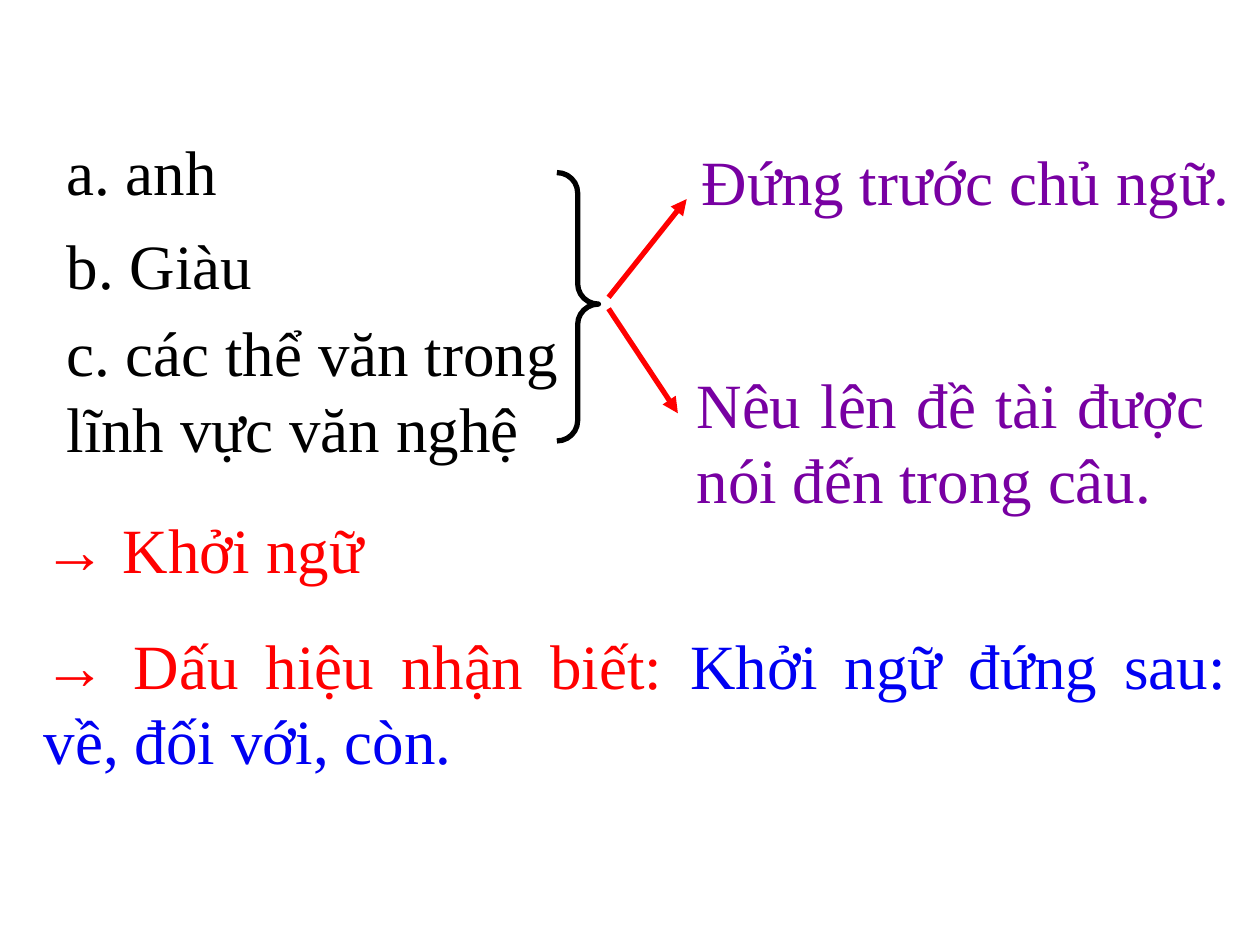
from dataclasses import dataclass

import pptx
import pptx.dml.color
import pptx.enum.shapes
import pptx.enum.text
import pptx.oxml
import pptx.oxml.ns
import pptx.util

COLUMNS, ROWS = 100, 75
SLIDE_WIDTH, SLIDE_HEIGHT = pptx.util.Inches(10), pptx.util.Inches(7.5)
ALIGN = pptx.enum.text.PP_ALIGN


@dataclass(frozen=True)
class Theme:
    font: str = "Times New Roman"
    text_size: int = 36
    line_width: int = 3
    example: str = "000000"
    trait: str = "7800A2"
    accent: str = "FF0000"
    detail: str = "0000F2"


THEME = Theme()


@dataclass(frozen=True)
class Box:
    """An area of the slide, in grid columns and rows."""
    left: float
    top: float
    width: float
    height: float

    def inner(self, left, top, width, height):
        return Box(self.left + left, self.top + top, width, height)

    def point(self, column, row):
        return (round((self.left + column) * SLIDE_WIDTH / COLUMNS),
                round((self.top + row) * SLIDE_HEIGHT / ROWS))

    def frame(self):
        left, top = self.point(0, 0)
        right, bottom = self.point(self.width, self.height)
        return left, top, right - left, bottom - top


def rgb(color):
    return pptx.dml.color.RGBColor.from_string(color)


def add_text(page, box, pieces, align=ALIGN.LEFT):
    """Place one paragraph made of (text, color) pieces."""
    text_frame = page.shapes.add_textbox(*box.frame()).text_frame
    text_frame.word_wrap = True
    text_frame.auto_size = pptx.enum.text.MSO_AUTO_SIZE.SHAPE_TO_FIT_TEXT
    para = text_frame.paragraphs[0]
    para.alignment = align
    for text, color in pieces:
        span = para.add_run()
        span.text = text
        span.font.name = THEME.font
        span.font.size = pptx.util.Pt(THEME.text_size)
        span.font.color.rgb = rgb(color)


def style_line(line, color):
    line.color.rgb = rgb(color)
    line.width = pptx.util.Pt(THEME.line_width)


def add_arrow(page, start, end):
    arrow = page.shapes.add_connector(
        pptx.enum.shapes.MSO_CONNECTOR.STRAIGHT, *start, *end)
    style_line(arrow.line, THEME.accent)
    properties = arrow._element.spPr
    head = pptx.oxml.parse_xml(
        f'<a:tailEnd {pptx.oxml.ns.nsdecls("a")} type="triangle"/>')
    properties.find(pptx.oxml.ns.qn("a:ln")).append(head)
    properties.append(pptx.oxml.parse_xml(
        f'<a:effectLst {pptx.oxml.ns.nsdecls("a")}/>'))


def add_examples(page, box):
    """The three examples, gathered by a brace."""
    examples = [
        ("a. anh", 0, 18.2, 7.1),
        ("b. Giàu", 7.5, 19.2, 7.1),
        ("c. các thể văn trong lĩnh vực văn nghệ", 14.4, 42.5, 13.1),
    ]
    for text, top, width, height in examples:
        add_text(page, box.inner(0, top, width, height), [(text, THEME.example)])

    brace_width = 3.3
    brace = page.shapes.add_shape(
        pptx.enum.shapes.MSO_SHAPE.RIGHT_BRACE,
        *box.inner(box.width - brace_width, 3.7, brace_width, 21.3).frame())
    brace.adjustments[0] = brace.adjustments[1] = 0.49
    brace.shadow.inherit = False
    brace.fill.background()
    style_line(brace.line, THEME.example)


def add_traits(page, box):
    """Two arrows fanning out to the shared traits."""
    add_arrow(page, box.point(0, 12.8), box.point(6.2, 5))
    add_arrow(page, box.point(0, 13.7), box.point(5.5, 22))
    add_text(page, box.inner(6.4, 0, 44.8, 7.1),
             [("Đứng trước chủ ngữ.", THEME.trait)])
    add_text(page, box.inner(6, 17.7, 42.3, 13.1),
             [("Nêu lên đề tài được nói đến trong câu.", THEME.trait)],
             ALIGN.JUSTIFY)


def add_conclusions(page, box):
    """The term and how to recognise it."""
    add_text(page, box.inner(0, 0, 50, 7.1), [("→ Khởi ngữ", THEME.accent)])
    add_text(page, box.inner(0, 9.2, box.width, 13.1),
             [("→ Dấu hiệu nhận biết: ", THEME.accent),
              ("Khởi ngữ đứng sau: về, đối với, còn.", THEME.detail)],
             ALIGN.JUSTIFY)


def main():
    deck = pptx.Presentation()
    deck.slide_width, deck.slide_height = SLIDE_WIDTH, SLIDE_HEIGHT
    page = deck.slides.add_slide(deck.slide_layouts[6])
    add_examples(page, Box(4.3, 10, 43.2, 27.5))
    add_traits(page, Box(48.3, 10.8, 51.2, 30.8))
    add_conclusions(page, Box(2.5, 40, 95.8, 22.3))
    deck.save("out.pptx")


if __name__ == "__main__":
    main()
